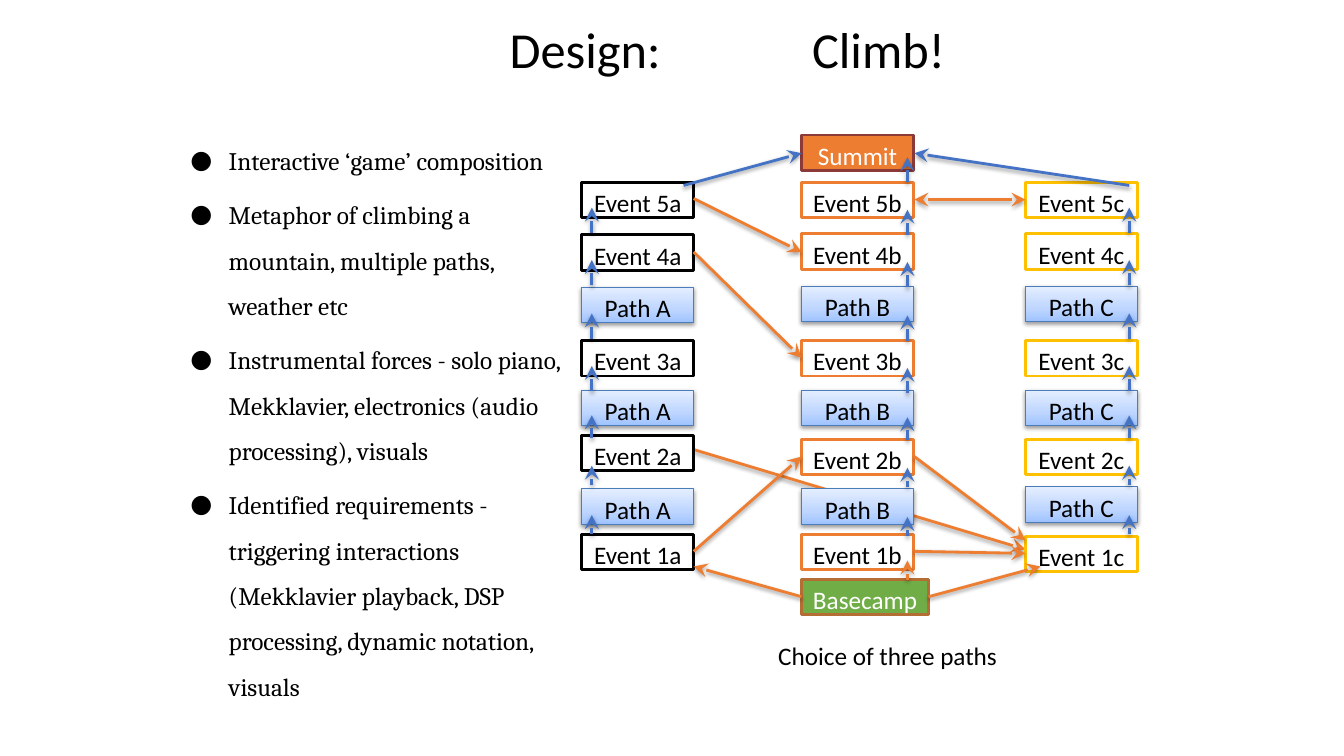
from dataclasses import dataclass

from pptx import Presentation
from pptx.dml.color import RGBColor
from pptx.enum.shapes import MSO_CONNECTOR, MSO_SHAPE
from pptx.enum.text import MSO_ANCHOR, MSO_AUTO_SIZE, PP_ALIGN
from pptx.oxml import parse_xml
from pptx.oxml.ns import nsdecls, qn
from pptx.util import Inches, Pt


@dataclass(frozen=True)
class Theme:
    """Colours, fonts and type sizes of the slide."""
    black: str = "000000"
    white: str = "FFFFFF"
    orange: str = "ED7D31"
    gold: str = "FFC000"
    blue: str = "4472C4"
    green: str = "70AD47"
    summit_edge: str = "8C3A38"
    basecamp_edge: str = "B46D33"
    path_edge: str = "4A7DBA"
    path_gradient: tuple = ((0, "9FC3FF"), (35, "BDD5FF"), (100, "E4EEFF"))
    sans: str = "Calibri"
    serif: str = "Cambria"
    title_size: int = 36
    body_size: int = 18


@dataclass(frozen=True)
class Box:
    """A region of the slide, in inches."""
    left: float
    top: float
    width: float
    height: float

    def lengths(self):
        """Return the four measures as lengths."""
        return [Inches(value) for value in (self.left, self.top, self.width, self.height)]


THEME = Theme()
BOX_WIDTH, BOX_HEIGHT = 1.11, 0.35
COLUMNS = (
    ("a", 0, THEME.black),
    ("b", 2.18, THEME.orange),
    ("c", 4.4, THEME.gold),
)
LEVELS = (
    ("Event 5", (0.47, 0.47, 0.47)),
    ("Event 4", (0.99, 0.98, 0.98)),
    ("Path", (1.51, 1.5, 1.5)),
    ("Event 3", (2.04, 2.04, 2.04)),
    ("Path", (2.53, 2.53, 2.53)),
    ("Event 2", (2.98, 3.02, 3.02)),
    ("Path", (3.51, 3.51, 3.49)),
    ("Event 1", (3.96, 3.96, 3.98)),
)
CLIMB_COLUMNS = ((0.1, 0), (3.23, 0.02), (5.43, 0))
CLIMB_STEPS = (
    (3.96, 3.77), (3.47, 3.28), (3.01, 2.78), (2.54, 2.29),
    (2.02, 1.77), (1.49, 1.24), (0.97, 0.72),
)
SUMMIT_ROUTES = (
    (1.01, 0.5, 2.18, 0.18), (3.23, 0.47, 3.23, 0.22), (5.43, 0.5, 3.3, 0.18),
)
HIDDEN_ROUTE = (1.11, 3.12, 4.4, 4.11)
CROSS_ROUTES = (
    (2.18, 4.58, 1.11, 4.28), (3.44, 4.58, 4.55, 4.28), (3.23, 4.41, 3.23, 4.22),
    (1.11, 4.13, 2.18, 3.19), (3.3, 3.19, 4.4, 4.02), (1.11, 1.16, 2.18, 2.21),
    (1.11, 0.63, 2.18, 1.16), (3.3, 4.13, 4.4, 4.15),
)
TWO_WAY_ROUTE = (3.3, 0.64, 4.4, 0.64)
POINTS = (
    "Interactive ‘game’ composition",
    "Metaphor of climbing a mountain, multiple paths, weather etc",
    "Instrumental forces - solo piano, Mekklavier, electronics (audio processing), visuals",
    "Identified requirements - triggering interactions (Mekklavier playback, DSP processing, "
    "dynamic notation, visuals",
)


def set_font(paragraph, size, name, color):
    """Format a whole paragraph."""
    paragraph.font.size = Pt(size)
    paragraph.font.name = name
    paragraph.font.color.rgb = RGBColor.from_string(color)


def set_line(line, color, width):
    """Give a line its colour and width."""
    line.color.rgb = RGBColor.from_string(color)
    line.width = Pt(width)


def add_shadow(properties):
    """Append a soft shadow that falls straight down."""
    properties.append(parse_xml(
        f'<a:effectLst {nsdecls("a")}><a:outerShdw blurRad="{Pt(3.1)}" dist="{Pt(1.6)}" '
        'dir="5400000" rotWithShape="0"><a:srgbClr val="000000"><a:alpha val="38000"/>'
        '</a:srgbClr></a:outerShdw></a:effectLst>'))


def add_box(shapes, box, text, fill, edge, color, width=2):
    """Add a labelled rectangle; without a fill it gets the path gradient and shadow."""
    shape = shapes.add_shape(MSO_SHAPE.RECTANGLE, *box.lengths())
    set_line(shape.line, edge, width)
    if fill:
        shape.fill.solid()
        shape.fill.fore_color.rgb = RGBColor.from_string(fill)
        shape.shadow.inherit = False
    else:
        shape.fill.background()
        properties = shape.element.spPr
        stops = "".join(f'<a:gs pos="{position * 1000}"><a:srgbClr val="{stop}"/></a:gs>'
                        for position, stop in THEME.path_gradient)
        properties.replace(properties.find(qn("a:noFill")), parse_xml(
            f'<a:gradFill {nsdecls("a")}><a:gsLst>{stops}</a:gsLst>'
            '<a:lin ang="16200000" scaled="0"/></a:gradFill>'))
        add_shadow(properties)
    shape.text_frame.vertical_anchor = MSO_ANCHOR.TOP
    paragraph = shape.text_frame.paragraphs[0]
    paragraph.text = text
    paragraph.alignment = PP_ALIGN.CENTER
    set_font(paragraph, THEME.body_size, THEME.sans, color)


def add_arrow(shapes, origin, route, color, ends=("tailEnd",)):
    """Add a shadowed arrow along a route measured from the origin box."""
    points = [Inches(value + start) for value, start in zip(route, (origin.left, origin.top) * 2)]
    connector = shapes.add_connector(MSO_CONNECTOR.STRAIGHT, *points)
    set_line(connector.line, color, 2)
    properties = connector.element.spPr
    for end in ends:
        properties.find(qn("a:ln")).append(
            parse_xml(f'<a:{end} {nsdecls("a")} type="stealth" w="lg" len="lg"/>'))
    add_shadow(properties)


def add_title(slide, box):
    """Place and format the title."""
    title = slide.shapes.title
    title.left, title.top, title.width, title.height = box.lengths()
    frame = title.text_frame
    frame.auto_size = MSO_AUTO_SIZE.NONE
    frame.vertical_anchor = MSO_ANCHOR.MIDDLE
    paragraph = frame.paragraphs[0]
    paragraph.text = "Design:\t\tClimb!"
    paragraph.alignment = PP_ALIGN.CENTER
    paragraph.line_spacing = 0.9
    paragraph._p.get_or_add_pPr().set("defTabSz", str(Inches(1)))
    set_font(paragraph, THEME.title_size, THEME.sans, THEME.black)


def add_points(slide, box):
    """Add the bulleted list."""
    frame = slide.shapes.add_textbox(*box.lengths()).text_frame
    frame.word_wrap = True
    frame.margin_top = frame.margin_bottom = Inches(0.1)
    for index, text in enumerate(POINTS):
        paragraph = frame.add_paragraph() if index else frame.paragraphs[0]
        paragraph.text = text
        paragraph.line_spacing = 1.5
        paragraph.space_before = Pt(6.4)
        set_font(paragraph, THEME.body_size, THEME.serif, THEME.black)
        properties = paragraph._p.get_or_add_pPr()
        properties.set("marL", str(Inches(0.5)))
        properties.set("indent", str(Inches(-0.38)))
        for bullet in (f'buFont {nsdecls("a")} typeface="{THEME.serif}"',
                       f'buChar {nsdecls("a")} char="●"'):
            properties.insert_element_before(
                parse_xml(f"<a:{bullet}/>"), "a:tabLst", "a:defRPr", "a:extLst")


def add_climb(slide, box):
    """Add the map of events and paths from basecamp to summit."""
    shapes = slide.shapes.add_group_shape().shapes
    add_arrow(shapes, box, HIDDEN_ROUTE, THEME.orange)
    middle = box.left + COLUMNS[1][1]
    add_box(shapes, Box(middle, box.top + 4.41, 1.26, BOX_HEIGHT), "Basecamp",
            THEME.green, THEME.basecamp_edge, THEME.white)
    add_box(shapes, Box(middle, box.top, BOX_WIDTH, BOX_HEIGHT), "Summit",
            THEME.orange, THEME.summit_edge, THEME.white)
    for name, tops in LEVELS:
        for (letter, left, edge), top in zip(COLUMNS, tops):
            place = Box(box.left + left, box.top + top, BOX_WIDTH, BOX_HEIGHT)
            if name == "Path":
                add_box(shapes, place, f"{name} {letter.upper()}", None,
                        THEME.path_edge, THEME.black, 0.75)
            else:
                add_box(shapes, place, name + letter, THEME.white, edge, THEME.black)
    for x, shift in CLIMB_COLUMNS:
        for start, end in CLIMB_STEPS:
            add_arrow(shapes, box, (x, start + shift, x, end + shift), THEME.blue)
    for route in SUMMIT_ROUTES:
        add_arrow(shapes, box, route, THEME.blue)
    for route in CROSS_ROUTES:
        add_arrow(shapes, box, route, THEME.orange)
    add_arrow(shapes, box, TWO_WAY_ROUTE, THEME.orange, ("headEnd", "tailEnd"))


def add_caption(slide, box):
    """Add the line below the map."""
    frame = slide.shapes.add_textbox(*box.lengths()).text_frame
    frame.word_wrap = True
    frame.text = "Choice of three paths"
    set_font(frame.paragraphs[0], THEME.body_size, THEME.sans, THEME.black)


def main():
    """Build and save the presentation."""
    presentation = Presentation()
    presentation.slide_width, presentation.slide_height = Inches(13.33), Inches(7.5)
    slide = presentation.slides.add_slide(presentation.slide_layouts[5])
    add_climb(slide, Box(5.77, 1.34, 5.51, 4.76))
    add_caption(slide, Box(7.62, 6.3, 2.75, 0.34))
    add_title(slide, Box(3.33, 0, 7.77, 1.03))
    add_points(slide, Box(1.67, 1.19, 4, 5.49))
    presentation.save("out.pptx")


if __name__ == "__main__":
    main()
